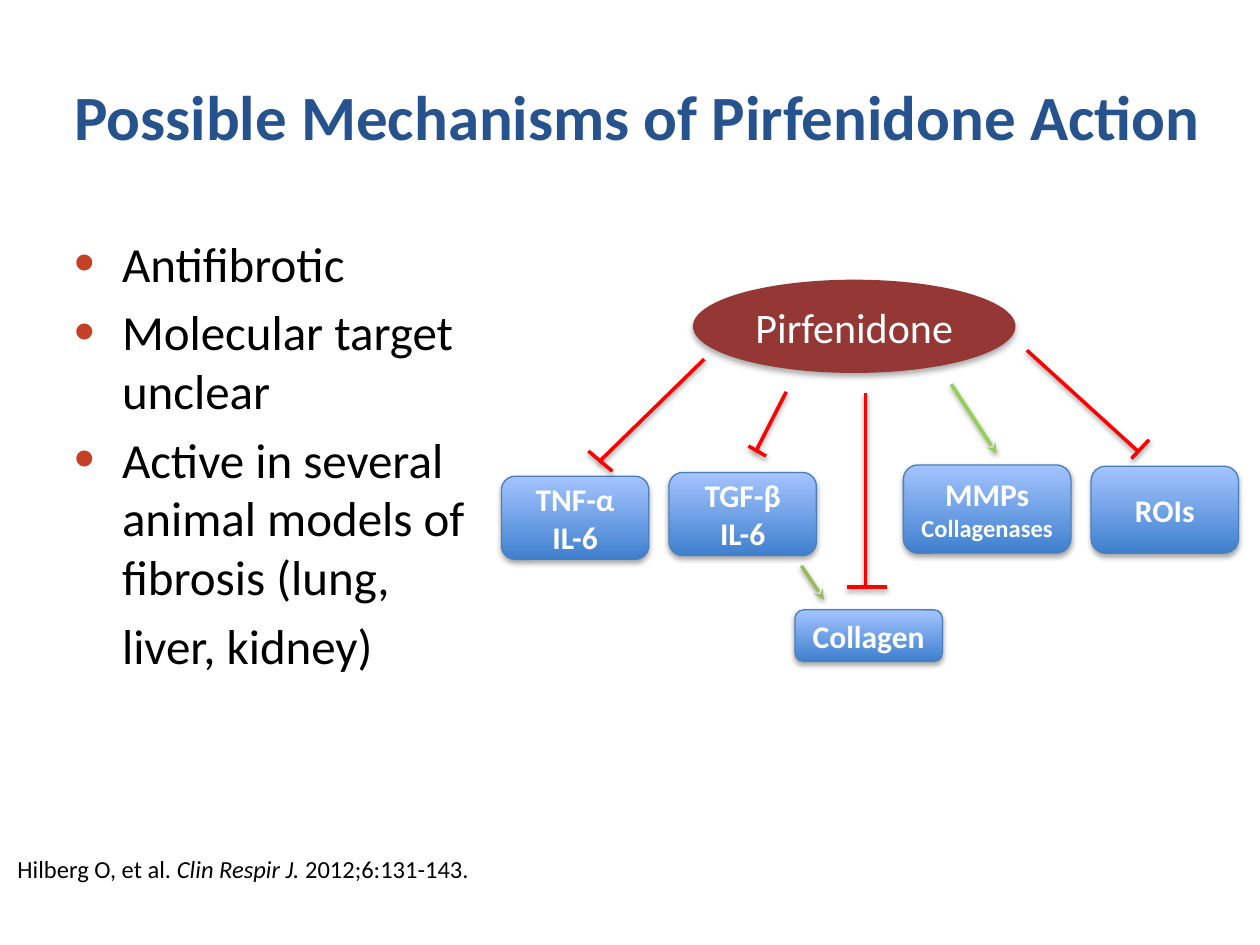
from dataclasses import dataclass

from lxml import etree
from pptx import Presentation
from pptx.dml.color import RGBColor
from pptx.enum.shapes import MSO_CONNECTOR, MSO_SHAPE
from pptx.enum.text import MSO_ANCHOR, MSO_AUTO_SIZE, PP_ALIGN
from pptx.oxml.ns import qn
from pptx.util import Inches, Pt

ROUND = MSO_SHAPE.ROUNDED_RECTANGLE
OVAL = MSO_SHAPE.OVAL
LINE = MSO_CONNECTOR.STRAIGHT
MIDDLE = MSO_ANCHOR.MIDDLE
TOP = MSO_ANCHOR.TOP
CENTER = PP_ALIGN.CENTER
LEFT = PP_ALIGN.LEFT
GROW = MSO_AUTO_SIZE.SHAPE_TO_FIT_TEXT
COLS, ROWS = 10, 7.5


@dataclass(frozen=True)
class Theme:
    font: str = "Calibri"
    title: str = "26528E"
    ink: str = "000000"
    light: str = "FFFFFF"
    drug: str = "953735"
    low: str = "3F80CE"
    high: str = "A4C4FF"
    edge: str = "4B7EBC"
    stop: str = "FF0000"
    lime: str = "92D050"
    olive: str = "9BBB59"
    dot: str = "C54125"
    head: int = 36
    body: int = 28
    lead: int = 24
    label: int = 18
    small: int = 14
    hair: float = 0.75
    stroke: float = 2


def rgb(code):
    return RGBColor.from_string(code)


def node(parent, tag, **attrs):
    return etree.SubElement(parent, qn(tag), {k: str(v) for k, v in attrs.items()})


class Board:
    def __init__(self, deck, theme):
        self.theme = theme
        self.slide = deck.slides.add_slide(deck.slide_layouts[6])
        self.shapes = self.slide.shapes
        self.col = deck.slide_width / COLS
        self.row = deck.slide_height / ROWS

    def place(self, *grid):
        return [round(v * (self.row if i % 2 else self.col)) for i, v in enumerate(grid)]

    def run(self, para, text, size, color, bold=False, slant=False):
        font = (run := para.add_run()).font
        run.text = text
        font.name, font.size = self.theme.font, Pt(size)
        font.bold, font.italic = bold, slant
        font.color.rgb = rgb(color)

    def text(self, area, anchor=TOP, wrap=True):
        frame = self.shapes.add_textbox(*self.place(*area)).text_frame
        frame.word_wrap = wrap
        frame.vertical_anchor = anchor
        return frame

    def shade(self, item, alpha, blur, dist):
        spot = item.element.spPr
        for old in spot.findall(qn("a:effectLst")):
            spot.remove(old)
        cast = node(node(spot, "a:effectLst"), "a:outerShdw", blurRad=Pt(blur),
                    dist=Pt(dist), dir=90 * 60000, rotWithShape=0)
        tone = node(cast, "a:srgbClr", val=self.theme.ink)
        node(tone, "a:alpha", val=alpha * 1000)

    def shape(self, kind, area, rows, bold):
        item = self.shapes.add_shape(kind, *self.place(*area))
        item.shadow.inherit = False
        frame = item.text_frame
        frame.word_wrap = True
        frame.vertical_anchor = MIDDLE
        for i, (text, size) in enumerate(rows):
            para = frame.add_paragraph() if i else frame.paragraphs[0]
            para.alignment = CENTER
            self.run(para, text, size, self.theme.light, bold)
        return item

    def drug(self, area, text):
        item = self.shape(OVAL, area, [(text, self.theme.lead)], False)
        item.fill.solid()
        item.fill.fore_color.rgb = rgb(self.theme.drug)
        item.line.fill.background()
        self.shade(item, 32, 3.5, 2.2)

    def target(self, area, *rows):
        item = self.shape(ROUND, area, rows, True)
        item.fill.gradient()
        item.fill.gradient_angle = 90
        for stop, tone, spot in zip(item.fill.gradient_stops,
                                    (self.theme.low, self.theme.high), (0, 1)):
            stop.color.rgb, stop.position = rgb(tone), spot
        item.line.color.rgb = rgb(self.theme.edge)
        item.line.width = Pt(self.theme.hair)
        self.shade(item, 35, 3.1, 1.8)

    def line(self, ends, color, arrow=False):
        item = self.shapes.add_connector(LINE, *self.place(*ends))
        item.line.color.rgb = rgb(color)
        item.line.width = Pt(self.theme.stroke)
        if arrow:
            node(item.element.spPr.find(qn("a:ln")), "a:tailEnd", type="stealth")
        self.shade(item, 38, 3.1, 1.6)

    def block(self, stem, bar):
        for ends in (stem, bar):
            self.line(ends, self.theme.stop)

    def title(self, area, text):
        para = self.text(area, MIDDLE).paragraphs[0]
        self.run(para, text, self.theme.head, self.theme.title, True)

    def source(self, area, parts):
        frame = self.text(area, wrap=False)
        frame.auto_size = GROW
        for text, slant in parts:
            self.run(frame.paragraphs[0], text, self.theme.small, self.theme.ink, slant=slant)

    def points(self, area, rows):
        theme = self.theme
        frame = self.text(area)
        for i, (text, dot) in enumerate(rows):
            para = frame.add_paragraph() if i else frame.paragraphs[0]
            para.alignment = LEFT
            para.space_before = Pt(0.2 * theme.body if i else 0)
            props = para._p.get_or_add_pPr()
            inset = round(0.38 * self.col)
            props.set("marL", str(inset))
            props.set("indent", str(-inset if dot else 0))
            if dot:
                node(node(props, "a:buClr"), "a:srgbClr", val=theme.dot)
                node(props, "a:buSzPct", val=120000)
                node(props, "a:buFont", typeface="Arial")
                node(props, "a:buChar", char="•")
            else:
                node(props, "a:buNone")
            self.run(para, text, theme.body, theme.ink)


def main():
    deck = Presentation()
    deck.slide_width, deck.slide_height = Inches(COLS), Inches(ROWS)
    theme = Theme()
    board = Board(deck, theme)
    label, small = theme.label, theme.small

    board.title((0.49, 0.29, 9.34, 1.25), "Possible Mechanisms of Pirfenidone Action")
    board.source((0.04, 6.73, 3.82, 0.34), [
        ("Hilberg O, et al. ", False),
        ("Clin Respir J. ", True),
        ("2012;6:131-143.", False),
    ])

    board.drug((5.5, 2.22, 2.56, 0.74), "Pirfenidone")
    wide = 1.17
    board.target((3.98, 3.78, wide, 0.66), ("TNF-α", label), ("IL-6", label))
    board.target((5.31, 3.75, wide, 0.66), ("TGF-β", label), ("IL-6", label))
    board.target((7.17, 3.69, 1.33, 0.7), ("MMPs", label), ("Collagenases", small))
    board.target((8.66, 3.7, wide, 0.69), ("ROIs", label))
    board.target((6.31, 4.84, wide, 0.41), ("Collagen", label))

    board.block((6.24, 3.11, 6, 3.58), (5.94, 3.54, 6.08, 3.62))
    board.block((8.15, 2.78, 9.03, 3.58), (9.12, 3.49, 8.98, 3.64))
    board.block((5.59, 2.85, 4.76, 3.66), (4.67, 3.58, 4.86, 3.74))
    board.block((6.87, 3.12, 6.87, 4.64), (7.04, 4.66, 6.72, 4.66))
    board.line((7.55, 3.05, 7.91, 3.6), theme.lime, True)
    board.line((6.36, 4.49, 6.54, 4.76), theme.olive, True)

    board.points((0.49, 1.8, 3.82, 3.39), [
        ("Antifibrotic", True),
        ("Molecular target unclear", True),
        ("Active in several animal models of fibrosis (lung,", True),
        ("liver, kidney)", False),
    ])
    deck.save("out.pptx")


if __name__ == "__main__":
    main()
